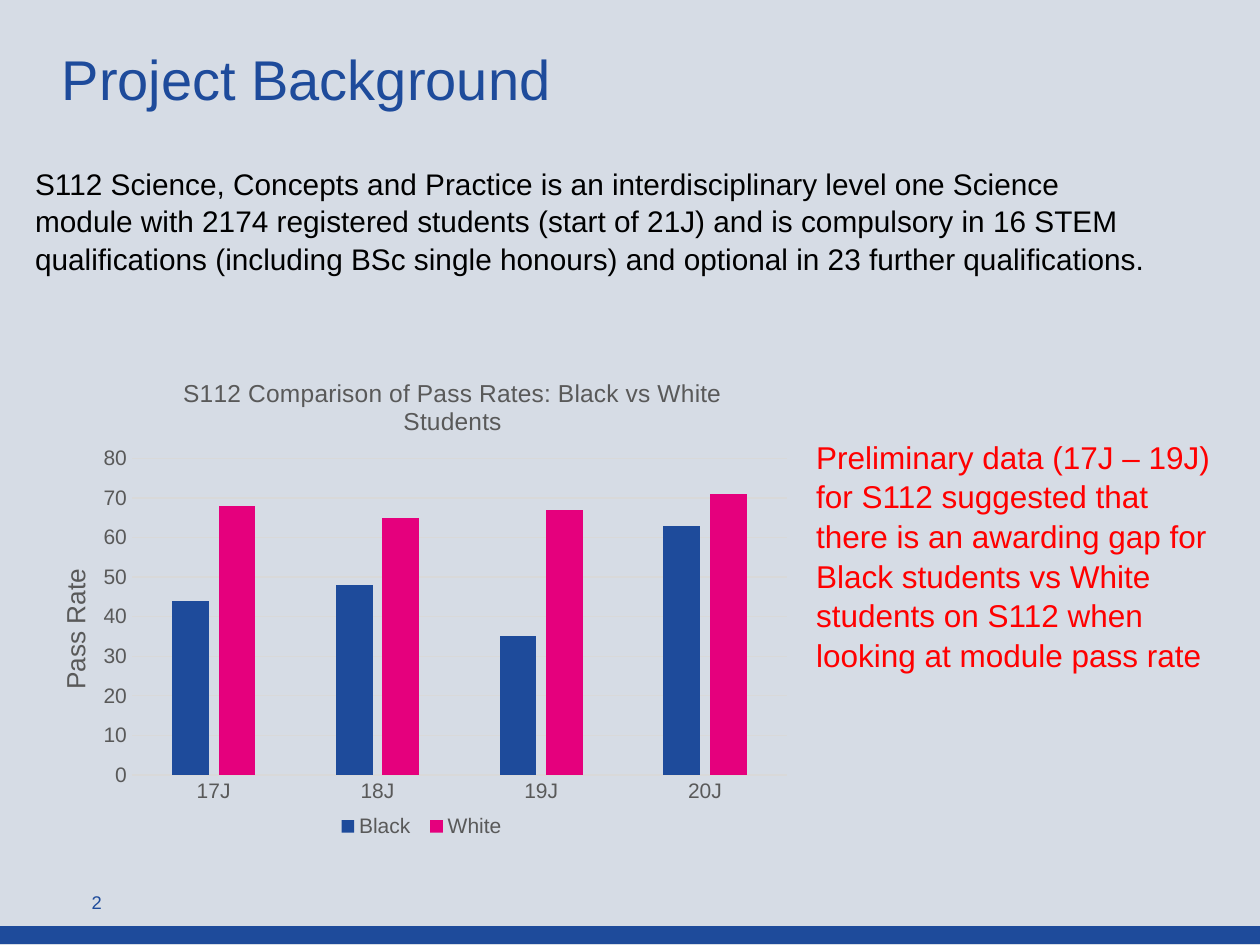
from lxml.etree import SubElement
from pptx import Presentation
from pptx.chart.data import CategoryChartData
from pptx.dml.color import RGBColor
from pptx.enum.chart import XL_CHART_TYPE, XL_LEGEND_POSITION, XL_TICK_MARK
from pptx.enum.shapes import MSO_SHAPE
from pptx.enum.text import MSO_ANCHOR, PP_ALIGN
from pptx.oxml.ns import qn
from pptx.util import Inches, Pt

BLUE = RGBColor(0x1E, 0x4B, 0x9B)
PINK = RGBColor(0xE5, 0x00, 0x7D)
RED = RGBColor(0xFF, 0x00, 0x00)
BLACK = RGBColor(0x00, 0x00, 0x00)
GREY = RGBColor(0x59, 0x59, 0x59)
PALE_GREY = RGBColor(0xD9, 0xD9, 0xD9)
BACKGROUND = RGBColor(0xD6, 0xDC, 0xE5)
FONT = "Arial"


def set_font(font, size, color):
    font.name, font.size, font.bold = FONT, Pt(size), False
    font.color.rgb = color


def write_text(sp, box, text, size, color, spacing):
    sp.left, sp.top, sp.width, sp.height = (Inches(v) for v in box)
    tf = sp.text_frame
    tf.word_wrap = True
    tf.vertical_anchor = MSO_ANCHOR.TOP
    p = tf.paragraphs[0]
    p.text = text
    p.alignment = PP_ALIGN.LEFT
    p.line_spacing = spacing
    set_font(p.font, size, color)


def add_text(slide, box, text, size, color, spacing=1.05):
    sp = slide.shapes.add_textbox(*(Inches(v) for v in box))
    write_text(sp, box, text, size, color, spacing)


def add_footer(slide, box, number):
    left, top, width, height = box
    bar = slide.shapes.add_shape(MSO_SHAPE.RECTANGLE, *(Inches(v) for v in box))
    bar.shadow.inherit = False
    bar.fill.solid()
    bar.fill.fore_color.rgb = BLUE
    bar.line.color.rgb = BLUE
    bar.line.width = Pt(1)
    add_text(slide, (left + 0.63, top - 0.32, 7.93, 0.31), number, 10.5, BLUE, 0.9)


def place_part(part, after, x, y, w=None, h=None):
    """Fix a chart part at fractions of the chart area, its layout following the tag `after`."""
    layout = part.find(qn("c:layout"))
    if layout is None:
        layout = part.makeelement(qn("c:layout"))
    previous = part.find(qn(after)) if after else None
    part.insert(0 if previous is None else part.index(previous) + 1, layout)
    manual = SubElement(layout, qn("c:manualLayout"))
    settings = [("xMode", "edge"), ("yMode", "edge"), ("x", x), ("y", y)]
    if w:
        settings = [("layoutTarget", "inner")] + settings + [("w", w), ("h", h)]
    for tag, value in settings:
        SubElement(manual, qn(f"c:{tag}")).set("val", str(value))


def write_title(titled, text, size):
    tf = titled.text_frame
    tf.text = text
    set_font(tf.paragraphs[0].font, size, GREY)


def add_pass_rate_chart(slide, box):
    data = CategoryChartData()
    data.categories = ["17J", "18J", "19J", "20J"]
    data.add_series("Black ", (44, 48, 35, 63))
    data.add_series("White", (68, 65, 67, 71))
    chart = slide.shapes.add_chart(
        XL_CHART_TYPE.COLUMN_CLUSTERED, *(Inches(v) for v in box), data).chart
    set_font(chart.font, 10, BLACK)

    plot = chart.plots[0]
    plot.gap_width, plot.overlap, plot.vary_by_categories = 219, -27, False
    for series, color in zip(plot.series, (BLUE, PINK)):
        series.format.fill.solid()
        series.format.fill.fore_color.rgb = color

    cat_axis, val_axis = chart.category_axis, chart.value_axis
    for axis in (cat_axis, val_axis):
        axis.major_tick_mark = axis.minor_tick_mark = XL_TICK_MARK.NONE
        set_font(axis.tick_labels.font, 12, GREY)
    val_axis.minimum_scale, val_axis.maximum_scale, val_axis.major_unit = 0, 80, 10
    val_axis.format.line.fill.background()
    for line in (cat_axis.format.line, val_axis.major_gridlines.format.line):
        line.color.rgb = PALE_GREY
        line.width = Pt(0.75)

    chart.has_title = True
    write_title(chart.chart_title, "S112 Comparison of Pass Rates: Black vs White Students", 14)
    write_title(val_axis.axis_title, "Pass Rate", 15)
    chart.has_legend = True
    chart.legend.position = XL_LEGEND_POSITION.BOTTOM
    chart.legend.include_in_layout = False
    set_font(chart.legend.font, 12, GREY)

    for query, after, *place in (
        ("c:chart/c:title", "c:tx", 0.2, 0.04),
        ("c:chart/c:plotArea", None, 0.14, 0.21, 0.84, 0.63),
        (".//c:valAx/c:title", "c:tx", 0.04, 0.42),
        ("c:chart/c:legend", "c:legendPos", 0.4, 0.91),
    ):
        place_part(chart.element.xpath(query)[0], after, *place)


def build_background_slide(prs):
    slide = prs.slides.add_slide(prs.slide_layouts[5])
    slide.background.fill.solid()
    slide.background.fill.fore_color.rgb = BACKGROUND
    add_footer(slide, (0, 7.36, 10, 0.13), "2")
    write_text(slide.shapes.title, (0.39, 0.36, 6.19, 0.46), "Project Background", 32, BLUE, 0.9)
    add_pass_rate_chart(slide, (0.18, 2.8, 6.19, 3.99))
    add_text(slide, (0.18, 1.25, 9.11, 1.55),
             "S112 Science, Concepts and Practice is an interdisciplinary level one Science "
             "module with 2174 registered students (start of 21J) and is compulsory in 16 STEM "
             "qualifications (including BSc single honours) and optional in 23 further "
             "qualifications.", 17, BLACK)
    add_text(slide, (6.38, 3.41, 3.34, 3.43),
             "Preliminary data (17J – 19J) for S112 suggested that there is an awarding gap for "
             "Black students vs White students on S112 when looking at module pass rate", 18, RED)


def main():
    prs = Presentation()
    prs.slide_width, prs.slide_height = Inches(10), Inches(7.5)
    build_background_slide(prs)
    prs.save("out.pptx")


if __name__ == "__main__":
    main()
